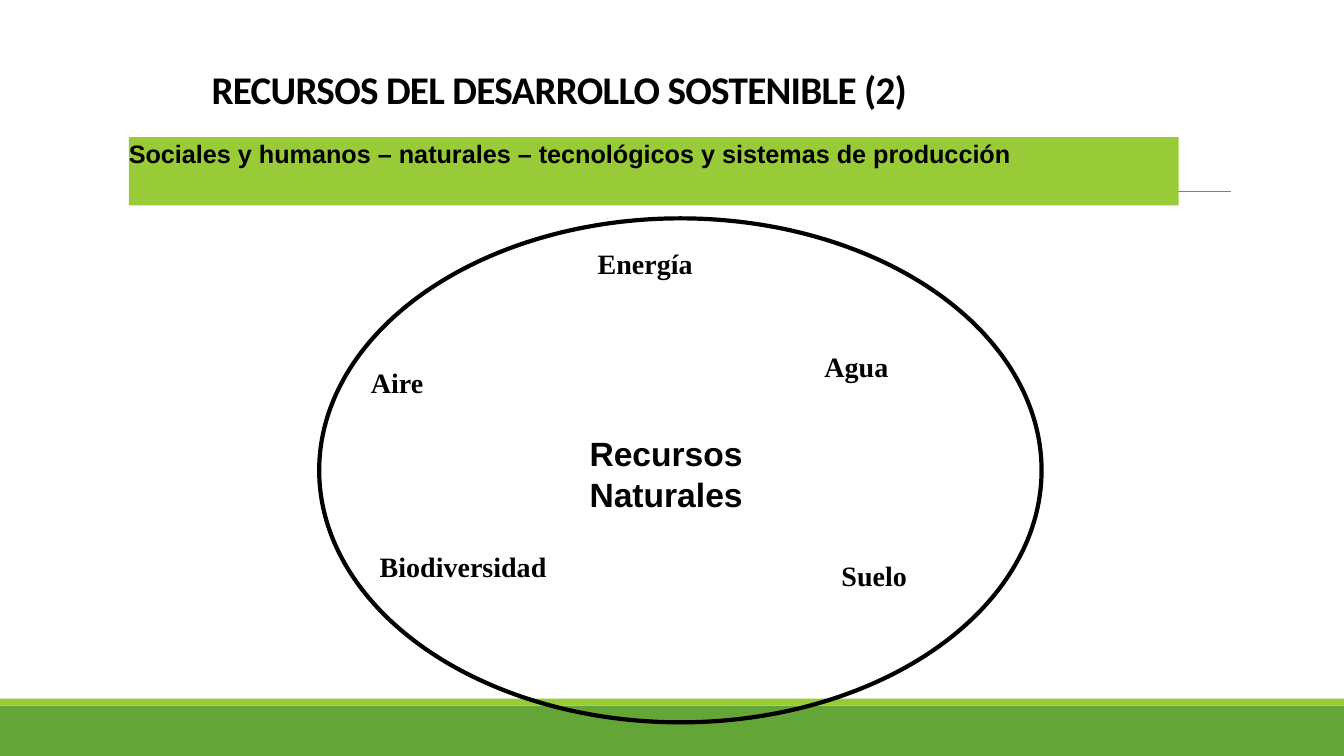
from pptx import Presentation
from pptx.dml.color import RGBColor
from pptx.enum.shapes import MSO_CONNECTOR, MSO_SHAPE
from pptx.enum.text import MSO_ANCHOR
from pptx.oxml.ns import qn
from pptx.util import Pt
from lxml.etree import SubElement

TITLE = "RECURSOS DEL DESARROLLO SOSTENIBLE (2)"
SUBTITLE = "Sociales y humanos – naturales – tecnológicos y sistemas de producción"
CENTER = "Recursos Naturales"
RESOURCES = [
    ("Suelo", 594, 395.3),
    ("Agua", 581.8, 246.2),
    ("Energía", 419.8, 172.8),
    ("Aire", 257.8, 257.8),
    ("Biodiversidad", 264.2, 388.8),
]
COLORS = {"ink": "000000", "green": "63A537", "lime": "99CB38", "rule": "808080"}
WIDTH, HEIGHT = 960, 540
FOOTER_HEIGHT, STRIPE_HEIGHT = 36, 5


def color(name):
    return RGBColor.from_string(COLORS[name])


def add_block(page, kind, bounds, fill=None, line_width=None):
    block = page.shapes.add_shape(kind, *map(Pt, bounds))
    block.shadow.inherit = False
    if fill:
        block.fill.solid()
        block.fill.fore_color.rgb = color(fill)
    else:
        block.fill.background()
    if line_width:
        block.line.color.rgb = color("ink")
        block.line.width = Pt(line_width)
    else:
        block.line.fill.background()
    return block


def add_text(page, text, bounds, font, size, spacing=1.0, anchor=MSO_ANCHOR.TOP):
    box = page.shapes.add_textbox(*map(Pt, bounds))
    frame = box.text_frame
    frame.word_wrap = True
    frame.vertical_anchor = anchor
    para = frame.paragraphs[0]
    para.line_spacing = spacing
    span = para.add_run()
    span.text = text
    span.font.name = font
    span.font.size = Pt(size)
    span.font.bold = True
    span.font.color.rgb = color("ink")
    return box


def add_rule(page, left, right, y):
    rule = page.shapes.add_connector(MSO_CONNECTOR.STRAIGHT, Pt(left), Pt(y), Pt(right), Pt(y))
    rule.line.color.rgb = color("rule")
    rule.line.width = Pt(0.5)
    SubElement(rule._element.spPr, qn("a:effectLst"))


def main():
    deck = Presentation()
    deck.slide_width, deck.slide_height = Pt(WIDTH), Pt(HEIGHT)
    page = deck.slides.add_slide(deck.slide_layouts[6])

    footer_top = HEIGHT - FOOTER_HEIGHT
    add_block(page, MSO_SHAPE.RECTANGLE, (0, footer_top, WIDTH, FOOTER_HEIGHT), "green")
    add_block(page, MSO_SHAPE.RECTANGLE, (0, footer_top - STRIPE_HEIGHT, WIDTH, STRIPE_HEIGHT), "lime")
    add_rule(page, 94.3, 879, 136.8)

    title = add_text(page, TITLE, (144, 18, 672, 66), "Calibri", 28, 0.85, MSO_ANCHOR.BOTTOM)
    title.text_frame.paragraphs[0].runs[0].font._element.set("spc", "-50")

    band = add_text(page, SUBTITLE, (92, 98, 750, 48.8), "Arial", 18, 0.9)
    band.fill.solid()
    band.fill.fore_color.rgb = color("lime")
    band.text_frame.margin_left = band.text_frame.margin_right = 0

    add_block(page, MSO_SHAPE.OVAL, (228, 156, 516, 360), line_width=3)
    add_text(page, CENTER, (414, 306, 126, 65.5), "Arial", 24)
    for name, left, top in RESOURCES:
        add_text(page, name, (left, top, 136.8, 31.7), "Times New Roman", 20)

    deck.save("out.pptx")


if __name__ == "__main__":
    main()
